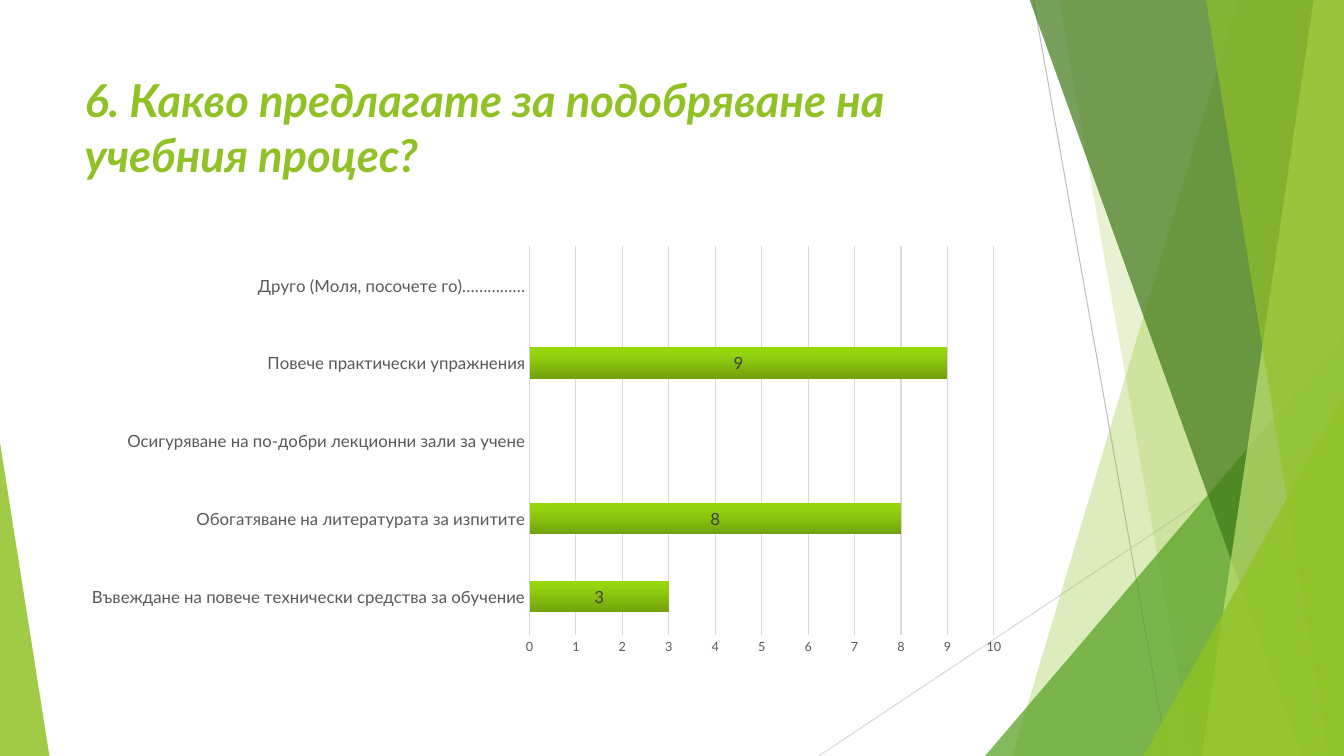
"""Build the survey slide on improving the teaching process."""
from dataclasses import dataclass
from typing import NamedTuple

from lxml.etree import SubElement
from pptx import Presentation
from pptx.chart.data import CategoryChartData
from pptx.dml.color import RGBColor
from pptx.enum.chart import XL_CHART_TYPE as ChartType, XL_LABEL_POSITION as LabelPosition
from pptx.enum.chart import XL_TICK_MARK as TickMark
from pptx.enum.shapes import MSO_CONNECTOR as Connector, MSO_SHAPE as Preset
from pptx.enum.text import MSO_ANCHOR as Anchor
from pptx.oxml import parse_xml
from pptx.oxml.ns import nsdecls, qn
from pptx.util import Inches, Pt


@dataclass(frozen=True)
class Theme:
    font: str = "Lato"
    lime: str = "90C226"
    pale_lime: str = "C0E474"
    leaf: str = "54A021"
    forest: str = "3F7819"
    rule: str = "BFBFBF"
    grid: str = "D9D9D9"
    axis_text: str = "595959"
    label_text: str = "404040"
    chart_text: str = "000000"
    bar_stops: tuple = ((0, "72A20B"), (80, "94D30E"), (100, "96D70A"))
    title_size: float = 32.4
    chart_size: float = 10
    label_size: float = 12
    value_size: float = 9


class Rule(NamedTuple):
    start: tuple
    end: tuple
    color: str


class Panel(NamedTuple):
    top_left: float
    top_right: float
    bottom_right: float
    bottom_left: float
    color: str
    opacity: int


class Wedge(NamedTuple):
    left: float
    top: float
    width: float
    apex: float
    color: str
    opacity: int


THEME = Theme()
WIDTH, HEIGHT, PANEL_TOP = 13.33, 7.5, -0.01
RULES = (
    Rule((10.25, 0), (11.58, HEIGHT), THEME.rule),
    Rule((WIDTH, 4.03), (8.12, HEIGHT), THEME.grid),
)
DECORATIONS = (
    Panel(12.28, WIDTH, WIDTH, 10.04, THEME.lime, 30),
    Panel(10.5, WIDTH, WIDTH, 11.83, THEME.lime, 20),
    Wedge(9.77, 3.33, 3.56, 1, THEME.leaf, 72),
    Panel(10.21, WIDTH, WIDTH, 12.91, THEME.forest, 70),
    Panel(13.03, WIDTH, WIDTH, 11.92, THEME.pale_lime, 70),
    Panel(11.96, WIDTH, WIDTH, 13.18, THEME.lime, 65),
    Wedge(11.34, 3.93, 1.99, 1, THEME.lime, 80),
    Wedge(0, 4.39, 0.49, 0, THEME.lime, 85),
)
ANSWERS = {
    "Въвеждане на повече технически средства за обучение": 3,
    "Обогатяване на литературата за изпитите": 8,
    "Осигуряване на по-добри лекционни зали за учене": None,
    "Повече практически упражнения": 9,
    "Друго (Моля, посочете го)……………": None,
}


def style_font(font, *, size: float, color: str, bold: bool = False, italic: bool = False) -> None:
    font.name, font.size = THEME.font, Pt(size)
    font.bold, font.italic = bold, italic
    font.color.rgb = RGBColor.from_string(color)


def style_line(line, color: str, width: float) -> None:
    line.color.rgb = RGBColor.from_string(color)
    line.width = Pt(width)


def draw_rule(page, rule: Rule) -> None:
    ends = [Inches(value) for value in rule.start + rule.end]
    connector = page.shapes.add_connector(Connector.STRAIGHT, *ends)
    style_line(connector.line, rule.color, 0.75)
    SubElement(connector._element.spPr, qn("a:effectLst"))


def draw_decoration(page, item: Panel | Wedge) -> None:
    if isinstance(item, Panel):
        corners = [(Inches(x), Inches(y)) for x, y in (
            (item.top_left, PANEL_TOP), (item.top_right, PANEL_TOP),
            (item.bottom_right, HEIGHT), (item.bottom_left, HEIGHT))]
        builder = page.shapes.build_freeform(*corners[0])
        builder.add_line_segments(corners[1:], close=True)
        shape = builder.convert_to_shape()
    else:
        shape = page.shapes.add_shape(
            Preset.ISOSCELES_TRIANGLE, Inches(item.left), Inches(item.top),
            Inches(item.width), Inches(HEIGHT - item.top))
        shape.adjustments[0] = item.apex
    shape.shadow.inherit = False
    shape.line.fill.background()
    shape.fill.solid()
    shape.fill.fore_color.rgb = RGBColor.from_string(item.color)
    color = shape._element.spPr.find(qn("a:solidFill"))[0]
    SubElement(color, qn("a:alpha"), val=str(item.opacity * 1000))


def add_text(page, text: str, *, left: float, top: float, width: float, height: float, **style) -> None:
    box = page.shapes.add_textbox(Inches(left), Inches(top), Inches(width), Inches(height))
    frame = box.text_frame
    frame.word_wrap = True
    frame.vertical_anchor = Anchor.TOP
    span = frame.paragraphs[0].add_run()
    span.text = text
    style_font(span.font, **style)


def fill_bars(series) -> None:
    stops = "".join(f'<a:gs pos="{position * 1000}"><a:srgbClr val="{color}"/></a:gs>'
                    for position, color in THEME.bar_stops)
    series._element.get_or_add_spPr().insert(0, parse_xml(
        f'<a:gradFill {nsdecls("a")} rotWithShape="1"><a:gsLst>{stops}</a:gsLst>'
        '<a:lin ang="16200000" scaled="0"/></a:gradFill>'))
    series.format.line.fill.background()


def place_plot(chart, **fractions: float) -> None:
    values = "".join(f'<c:{key} val="{value}"/>' for key, value in fractions.items())
    area = chart._chartSpace.chart.plotArea
    for layout in area.findall(qn("c:layout")):
        area.remove(layout)
    area.insert(0, parse_xml(
        f'<c:layout {nsdecls("c")}><c:manualLayout><c:layoutTarget val="inner"/>'
        f'<c:xMode val="edge"/><c:yMode val="edge"/>{values}</c:manualLayout></c:layout>'))


def add_answer_chart(page) -> None:
    data = CategoryChartData()
    data.categories = list(ANSWERS)
    data.add_series("Series 1", list(ANSWERS.values()))
    chart = page.shapes.add_chart(
        ChartType.BAR_STACKED, Inches(0.74), Inches(2.36), Inches(9.4), Inches(4.24), data).chart
    style_font(chart.font, size=THEME.chart_size, color=THEME.chart_text)
    chart.has_title = chart.has_legend = False
    place_plot(chart, x=0.48, y=0.02, w=0.49, h=0.91)

    plot = chart.plots[0]
    plot.gap_width, plot.overlap, plot.vary_by_categories = 150, 100, False
    fill_bars(plot.series[0])
    labels = plot.series[0].data_labels
    labels.show_value = True
    labels.position = LabelPosition.CENTER
    style_font(labels.font, size=THEME.label_size, color=THEME.label_text)

    for axis, size in ((chart.category_axis, THEME.label_size), (chart.value_axis, THEME.value_size)):
        axis.major_tick_mark = axis.minor_tick_mark = TickMark.NONE
        style_font(axis.tick_labels.font, size=size, color=THEME.axis_text)
    chart.category_axis.has_major_gridlines = False
    style_line(chart.category_axis.format.line, THEME.grid, 1)
    values = chart.value_axis
    values.minimum_scale, values.maximum_scale, values.major_unit = 0, 10, 1
    values.format.line.fill.background()
    values.has_major_gridlines = True
    style_line(values.major_gridlines.format.line, THEME.grid, 0.75)


def main() -> None:
    deck = Presentation()
    deck.slide_width, deck.slide_height = Inches(WIDTH), Inches(HEIGHT)
    page = deck.slides.add_slide(deck.slide_layouts[6])
    for rule in RULES:
        draw_rule(page, rule)
    for item in DECORATIONS:
        draw_decoration(page, item)
    add_text(page, "6. Какво предлагате за подобряване на учебния процес?",
             left=0.74, top=0.67, width=9.4, height=1.44,
             size=THEME.title_size, color=THEME.lime, bold=True, italic=True)
    add_answer_chart(page)
    deck.save("out.pptx")


if __name__ == "__main__":
    main()
